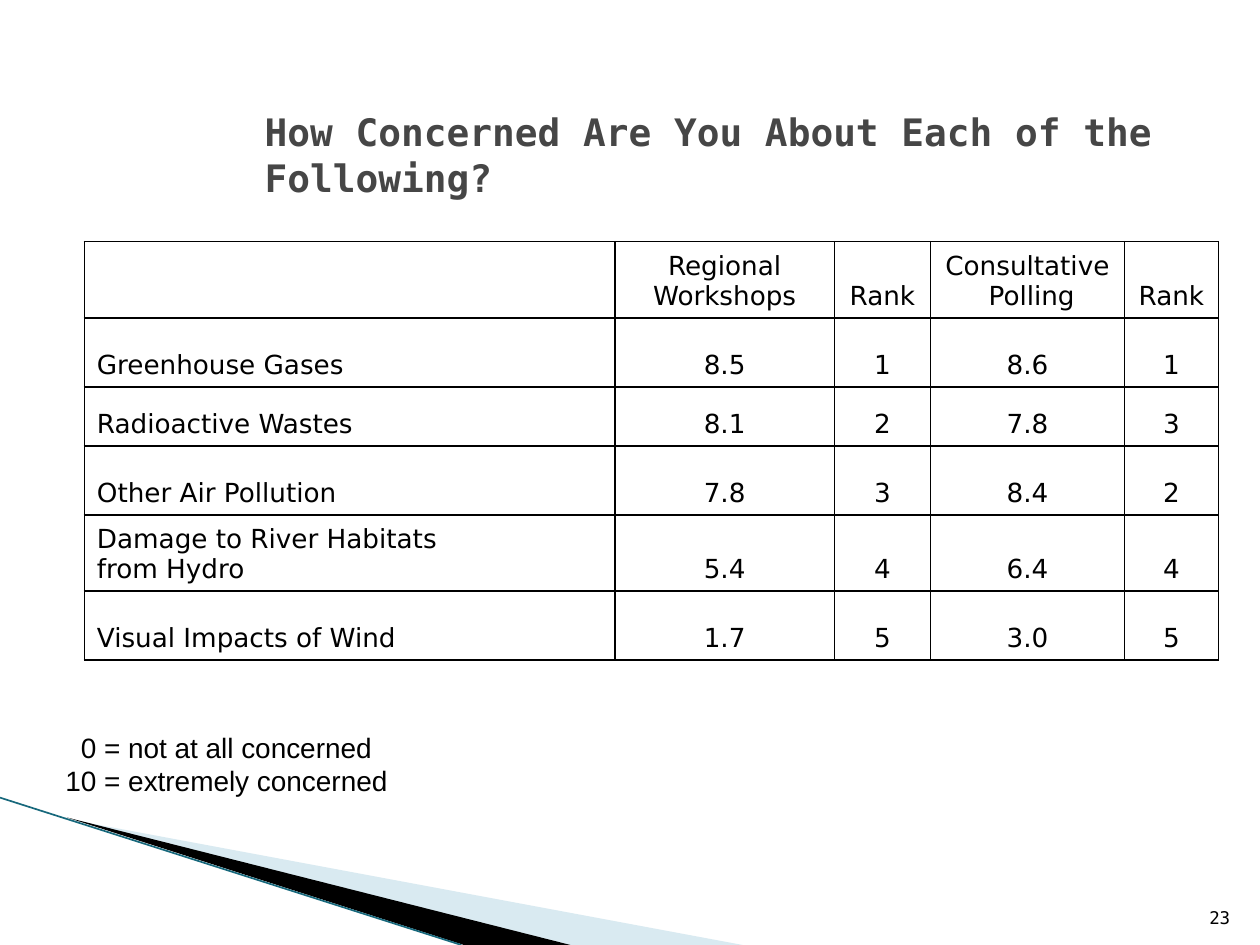
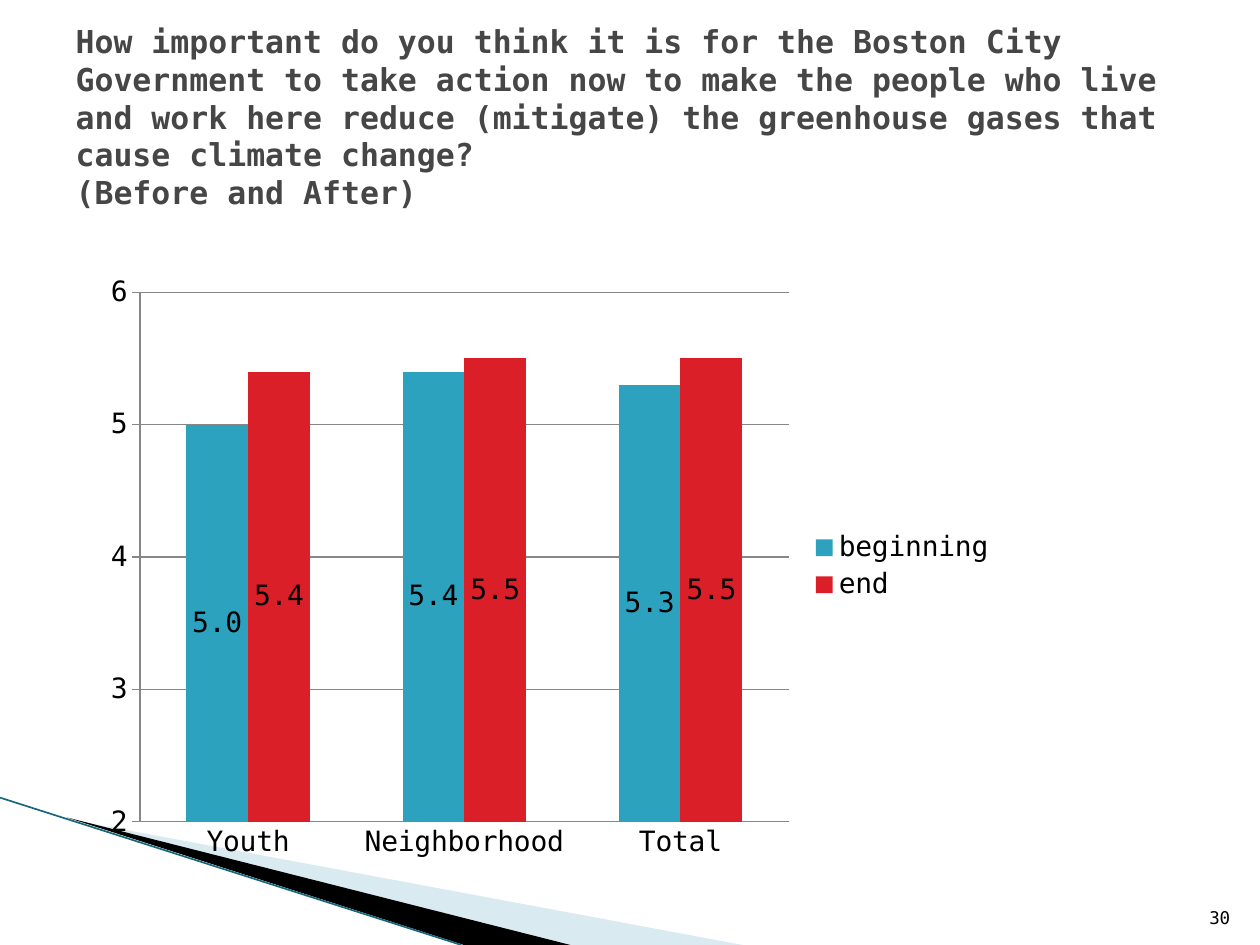
from lxml.etree import SubElement as Sub
from pptx import Presentation
from pptx.chart.data import CategoryChartData as Data
from pptx.dml.color import RGBColor as Rgb
from pptx.enum.chart import XL_CHART_TYPE as Kind, XL_LABEL_POSITION as Spot
from pptx.enum.chart import XL_LEGEND_POSITION as Side, XL_TICK_MARK as Tick
from pptx.enum.shapes import MSO_CONNECTOR as Link
from pptx.enum.text import MSO_ANCHOR as Anchor, MSO_AUTO_SIZE as Fit, PP_ALIGN as Align
from pptx.oxml.ns import qn
from pptx.util import Cm, Pt

MONO, SANS = "DejaVu Sans Mono", "DejaVu Sans"
BLACK, GREY, PALE, TEAL = "000000", "464646", "A0CBDC", "17687C"
AXIS = "878787"


def paint(color, value):
    color.rgb = Rgb.from_string(value)


def write(para, text, size, face, color=BLACK, bold=False):
    run = para.add_run()
    run.text = text
    run.font.size, run.font.name, run.font.bold = Pt(size), face, bold
    paint(run.font.color, color)


deck = Presentation()
deck.slide_width, deck.slide_height = Cm(25.4), Cm(19.05)

heads = [
    ("23", 21.6, (5.08, 2.54, 20.32, 1.14),
     ["How Concerned Are You About Each of the Following?"]),
    ("30", 18, (1.27, 0.76, 22.86, 3.18),
     ["How important do you think it is for the Boston City Government to take "
      "action now to make the people who live and work here reduce (mitigate) "
      "the greenhouse gases that cause climate change?", "(Before and After)"]),
]
bands = [
    (PALE, [(1.4, 16.52), (14.97, 19.05), (11.5, 19.05)]),
    (BLACK, [(1.35, 16.48), (11.5, 19.05), (9.35, 19.05)]),
]

for page, size, place, lines in heads:
    slide = deck.slides.add_slide(deck.layouts[5] if hasattr(deck, "layouts") else deck.slide_layouts[5])
    title = slide.shapes.title
    title.left, title.top, title.width, title.height = map(Cm, place)
    frame = title.text_frame
    frame.auto_size, frame.word_wrap = Fit.NONE, True
    frame.vertical_anchor = Anchor.MIDDLE
    para = frame.paragraphs[0]
    para.alignment = Align.LEFT
    for num, line in enumerate(lines):
        if num:
            para.add_line_break()
        write(para, line, size, MONO, GREY, True)

    for color, spots in bands:
        points = [(Cm(x), Cm(y)) for x, y in spots]
        pen = slide.shapes.build_freeform(*points[0], scale=1.0)
        pen.add_line_segments(points[1:])
        band = pen.convert_to_shape()
        band.shadow.inherit = False
        band.fill.solid()
        paint(band.fill.fore_color, color)
        band.line.fill.background()
        if color == PALE:
            tint = band.fill._xPr.find(qn("a:solidFill"))[0]
            Sub(tint, qn("a:alpha"), val="40000")
    edge = slide.shapes.add_connector(Link.STRAIGHT, 0, Cm(16.08), Cm(9.3), Cm(19.05))
    edge.line.width = Pt(0.95)
    paint(edge.line.color, TEAL)
    Sub(edge._element.spPr, qn("a:effectLst"))

    frame = slide.shapes.add_textbox(Cm(24.03), Cm(17.81), Cm(1.02), Cm(1.02)).text_frame
    frame.word_wrap, frame.vertical_anchor = True, Anchor.BOTTOM
    frame.paragraphs[0].alignment = Align.RIGHT
    write(frame.paragraphs[0], page, 10, MONO)

poll, survey = deck.slides

rows = [
    ["", "Regional\nWorkshops", "Rank", "Consultative\n Polling", "Rank"],
    ["Greenhouse Gases", "8.5", "1", "8.6", "1"],
    ["Radioactive Wastes", "8.1", "2", "7.8", "3"],
    ["Other Air Pollution", "7.8", "3", "8.4", "2"],
    ["Damage to River Habitats\nfrom Hydro", "5.4", "4", "6.4", "4"],
    ["Visual Impacts of Wind", "1.7", "5", "3.0", "5"],
]
wide = [10.7, 4.42, 1.94, 3.91, 1.89]
high = [1.54, 1.39, 1.19, 1.39, 1.54, 1.39]
grid = poll.shapes.add_table(len(rows), len(wide), Cm(1.7), Cm(4.87),
                             Cm(sum(wide)), Cm(sum(high))).table
grid.first_row = grid.horz_banding = False
for col, width in zip(grid.columns, wide):
    col.width = Cm(width)
for r, row in enumerate(rows):
    grid.rows[r].height = Cm(high[r])
    for c, text in enumerate(row):
        cell = grid.cell(r, c)
        cell.vertical_anchor = Anchor.BOTTOM
        props = cell._tc.get_or_add_tcPr()
        for side in ("lnL", "lnR", "lnT", "lnB"):
            rule = Sub(props, qn("a:" + side), w=str(Pt(1)))
            Sub(Sub(rule, qn("a:solidFill")), qn("a:srgbClr"), val=BLACK)
        cell.fill.background()
        frame = cell.text_frame
        for num, line in enumerate(text.split("\n")):
            para = frame.add_paragraph() if num else frame.paragraphs[0]
            para.alignment = Align.CENTER if c else Align.LEFT
            if line:
                write(para, line, 15, SANS)

frame = poll.shapes.add_textbox(Cm(1.07), Cm(14.6), Cm(18), Cm(1.63)).text_frame
frame.word_wrap = True
para = frame.paragraphs[0]
para._p.get_or_add_pPr().set("marL", str(Cm(0.31)))
write(para, "0 = not at all concerned", 16, "Arial")
write(frame.add_paragraph(), "10 = extremely concerned", 16, "Arial")

data = Data(number_format="0.0")
data.categories = ["Youth", "Neighborhood", "Total"]
data.add_series("beginning", [5.0, 5.4, 5.3])
data.add_series("end", [5.4, 5.5, 5.5])
chart = survey.shapes.add_chart(Kind.COLUMN_CLUSTERED, Cm(1.9), Cm(5.28),
                                Cm(18.42), Cm(12.27), data).chart
chart.has_title = False
chart.font.size, chart.font.name = Pt(16), MONO
paint(chart.font.color, BLACK)
chart.has_legend = True
chart.legend.position = Side.RIGHT
chart.legend.include_in_layout = False

plot = chart.plots[0]
plot.gap_width, plot.overlap, plot.vary_by_categories = 150, 0, False
for bars, color in zip(plot.series, ("2DA2BF", "DA1F28")):
    bars.format.fill.solid()
    paint(bars.format.fill.fore_color, color)
    tags = bars.data_labels
    tags.show_value, tags.position = True, Spot.CENTER
    tags.number_format, tags.number_format_is_linked = "0.0", False

base, scale = chart.category_axis, chart.value_axis
base.major_tick_mark = Tick.NONE
scale.major_tick_mark = Tick.OUTSIDE
scale.minimum_scale, scale.maximum_scale, scale.major_unit = 2, 6, 1
scale.tick_labels.number_format = "0"
scale.tick_labels.number_format_is_linked = False
scale.has_major_gridlines = True
for part in (base, scale, scale.major_gridlines):
    part.format.line.width = Pt(0.75)
    paint(part.format.line.color, AXIS)

area = chart._chartSpace.chart.plotArea
for old in area.findall(qn("c:layout")):
    area.remove(old)
box = Sub(area, qn("c:layout"))
area.insert(0, box)
inner = Sub(box, qn("c:manualLayout"))
for key, val in [("layoutTarget", "inner"), ("xMode", "edge"), ("yMode", "edge"),
                 ("x", "0.05"), ("y", "0.05"), ("w", "0.71"), ("h", "0.87")]:
    Sub(inner, qn("c:" + key), val=val)

deck.save("out.pptx")
